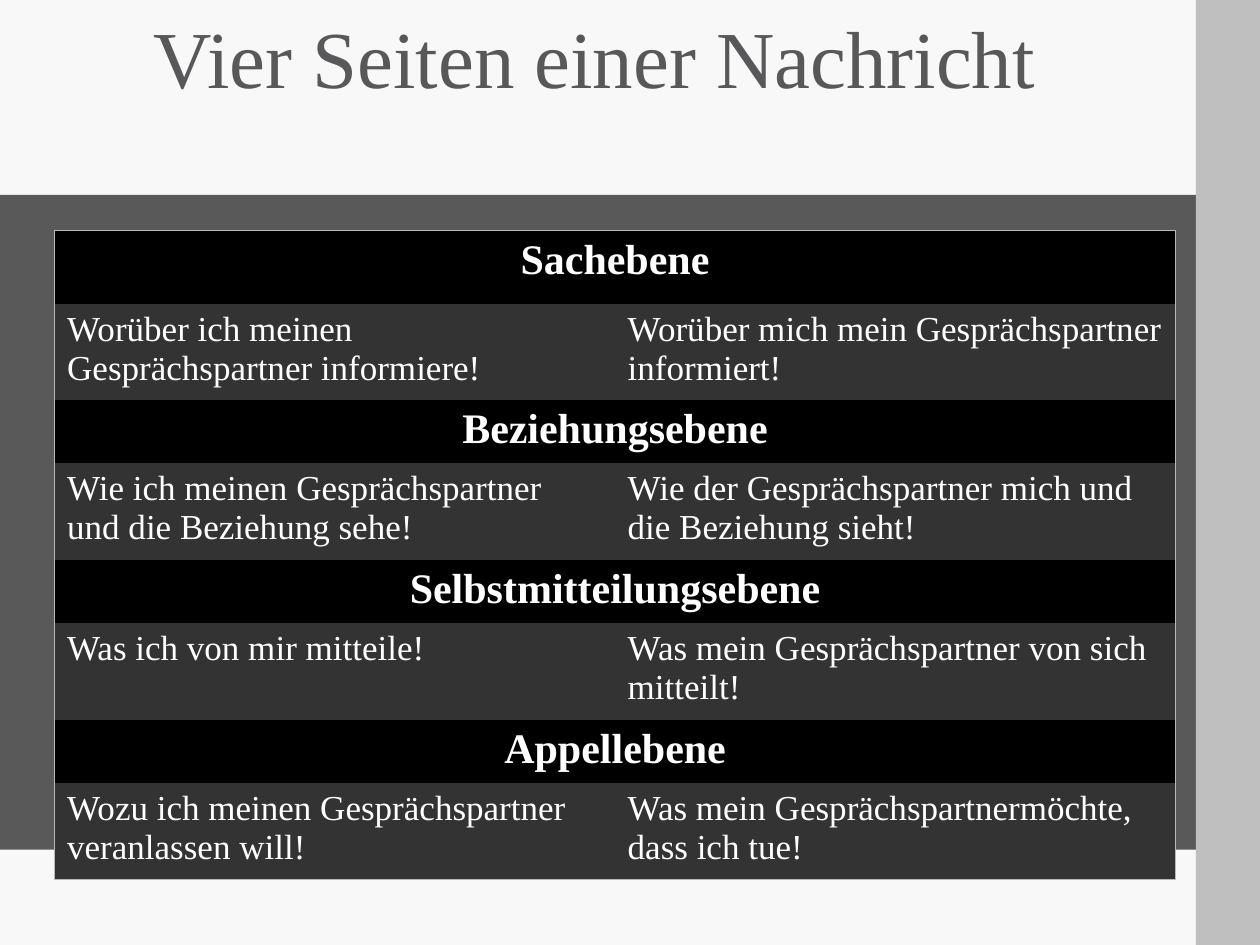
from lxml.etree import SubElement
from pptx import Presentation
from pptx.dml.color import RGBColor
from pptx.enum.shapes import MSO_SHAPE
from pptx.enum.text import MSO_ANCHOR, PP_ALIGN
from pptx.oxml.ns import qn
from pptx.util import Cm, Pt

COLORS = {
    "background": "F8F8F8",
    "band": "595959",
    "stripe": "BFBFBF",
    "title": "58585A",
    "heading": "000000",
    "answer": "333333",
    "text": "FFFFFF",
    "border": "B9B9B9",
}
FORMATS = {
    "title": {"size": Pt(46.2), "bold": False},
    "heading": {"size": Pt(24), "bold": True},
    "answer": {"size": Pt(20), "bold": False},
}
LEVELS = [
    ("Sachebene",
     "Worüber ich meinen Gesprächspartner informiere!",
     "Worüber mich mein Gesprächspartner informiert!"),
    ("Beziehungsebene",
     "Wie ich meinen Gesprächspartner und die Beziehung sehe!",
     "Wie der Gesprächspartner mich und die Beziehung sieht!"),
    ("Selbstmitteilungsebene",
     "Was ich von mir mitteile!",
     "Was mein Gesprächspartner von sich mitteilt!"),
    ("Appellebene",
     "Wozu ich meinen Gesprächspartner veranlassen will!",
     "Was mein Gesprächspartnermöchte, dass ich tue!"),
]


def rgb(name):
    return RGBColor.from_string(COLORS[name])


class SlideBuilder:
    font_name = "Times New Roman"

    def __init__(self, slide):
        self.slide = slide
        fill = slide.background.fill
        fill.solid()
        fill.fore_color.rgb = rgb("background")

    def bar(self, left, top, width, height, color):
        bar = self.slide.shapes.add_shape(
            MSO_SHAPE.RECTANGLE, Cm(left), Cm(top), Cm(width), Cm(height))
        bar.shadow.inherit = False
        bar.fill.solid()
        bar.fill.fore_color.rgb = rgb(color)
        bar.line.fill.background()

    def label(self, frame, text, style, color="text", align=PP_ALIGN.LEFT):
        paragraph = frame.paragraphs[0]
        paragraph.alignment = align
        run = paragraph.add_run()
        run.text = text
        for key, value in {"name": self.font_name, **FORMATS[style]}.items():
            setattr(run.font, key, value)
        run.font.color.rgb = rgb(color)

    def title(self, left, top, width, height, text):
        frame = self.slide.shapes.add_textbox(
            Cm(left), Cm(top), Cm(width), Cm(height)).text_frame
        frame.word_wrap = True
        frame.vertical_anchor = MSO_ANCHOR.MIDDLE
        self.label(frame, text, "title", "title", PP_ALIGN.CENTER)

    def cell(self, cell, style, edges):
        properties = cell._tc.get_or_add_tcPr()
        for side in "LRTB":
            line = SubElement(properties, qn(f"a:ln{side}"), w=str(Pt(0.75)))
            if side in edges:
                solid = SubElement(line, qn("a:solidFill"))
                SubElement(solid, qn("a:srgbClr"), val=COLORS["border"])
            else:
                SubElement(line, qn("a:noFill"))
        cell.fill.solid()
        cell.fill.fore_color.rgb = rgb(style)

    def level_table(self, left, top, column_width, heights, levels):
        table = self.slide.shapes.add_table(
            len(heights), 2, Cm(left), Cm(top),
            Cm(2 * column_width), Cm(sum(heights))).table
        table.first_row = table.horz_banding = False
        for column in table.columns:
            column.width = Cm(column_width)
        last = len(heights) - 1
        for index, height in enumerate(heights):
            table.rows[index].height = Cm(height)
            is_heading = index % 2 == 0
            ends = ("T" if index == 0 else "") + ("B" if index == last else "")
            for column, side in enumerate("LR"):
                edges = ("LR" if is_heading and column == 0 else side) + ends
                self.cell(table.cell(index, column),
                          "heading" if is_heading else "answer", edges)
        for level, (heading, *answers) in enumerate(levels):
            heading_cell = table.cell(2 * level, 0)
            heading_cell.merge(table.cell(2 * level, 1))
            self.label(heading_cell.text_frame, heading, "heading",
                       align=PP_ALIGN.CENTER)
            for column, answer in enumerate(answers):
                self.label(table.cell(2 * level + 1, column).text_frame,
                           answer, "answer")


def main():
    presentation = Presentation()
    presentation.slide_width = Cm(25.4)
    presentation.slide_height = Cm(19.05)
    builder = SlideBuilder(
        presentation.slides.add_slide(presentation.slide_layouts[6]))
    builder.bar(-0.71, 3.93, 25, 13.2, "band")
    builder.bar(24.11, -0.48, 1.57, 20, "stripe")
    builder.title(0.69, 0.13, 22.6, 2, "Vier Seiten einer Nachricht")
    heights = [1.47, 1.82] + [1.19, 1.82] * 3
    builder.level_table(1.1, 4.65, 11.3, heights, LEVELS)
    presentation.save("out.pptx")


if __name__ == "__main__":
    main()
